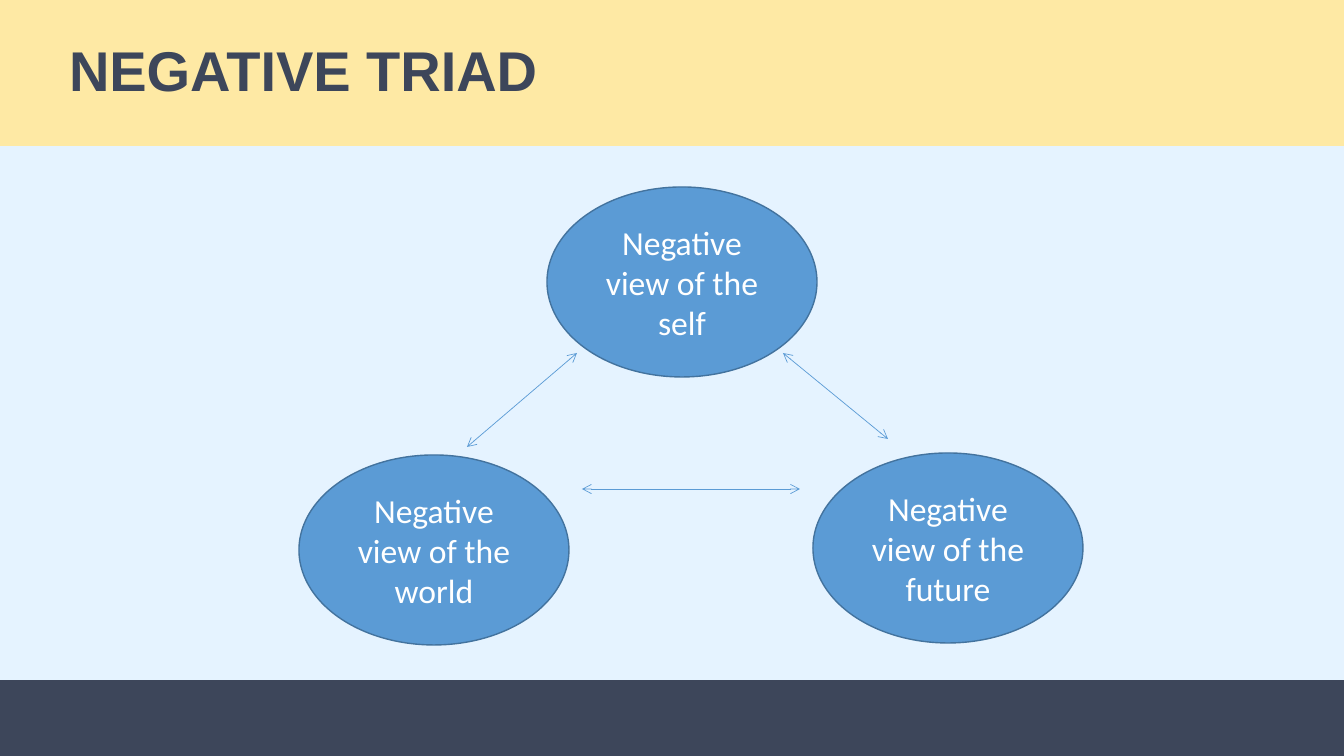
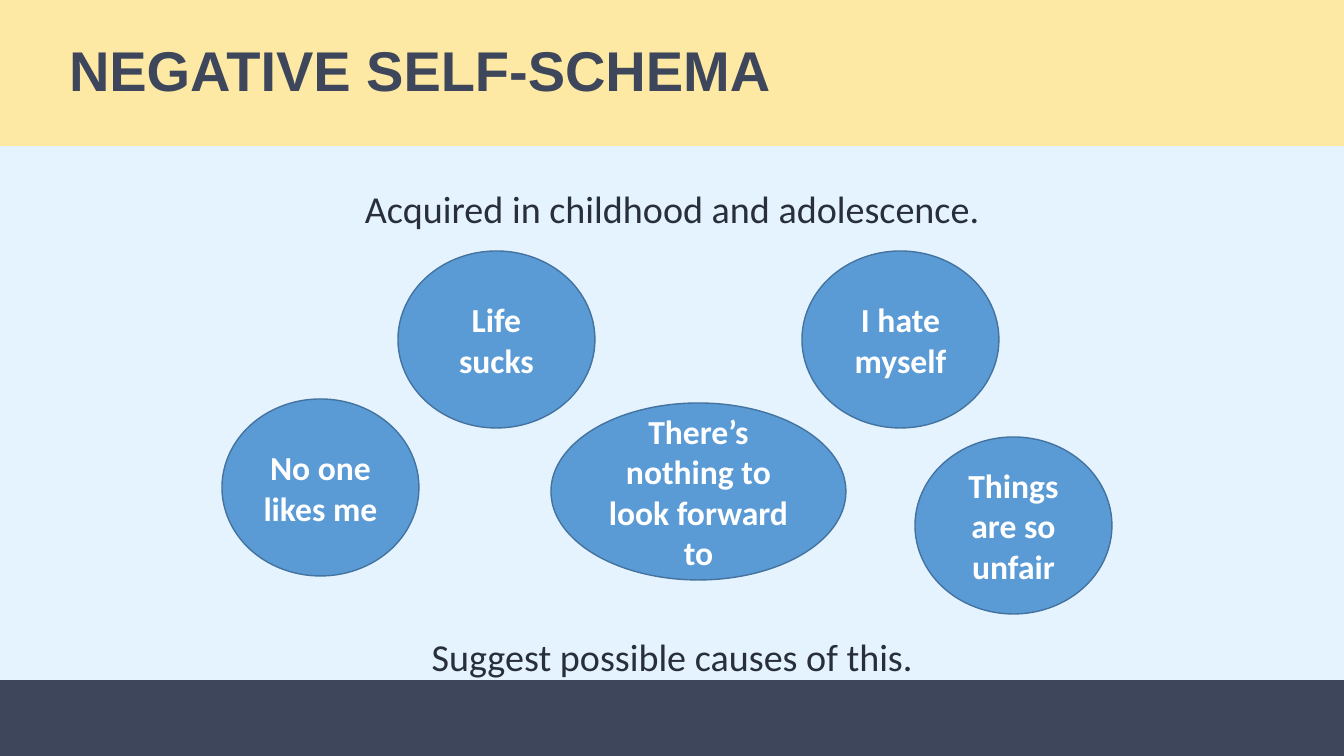
"""Build two slides on the negative triad and the negative self-schema."""
import pptx
import pptx.dml.color
import pptx.enum.shapes
import pptx.enum.text
import pptx.oxml.ns
import pptx.util
import lxml.etree

WIDTH, HEIGHT = 1344, 756
EMU_PER_PX = 12192000 / WIDTH
TITLE_HEIGHT = 146
FOOTER_TOP = 680
TITLE_ONLY = 5


def px(length):
    return pptx.util.Emu(round(length * EMU_PER_PX))


def colour(hex_string):
    return pptx.dml.color.RGBColor.from_string(hex_string)


def paint(fill, hex_string):
    fill.solid()
    fill.fore_color.rgb = colour(hex_string)


class Deck:
    background = "E5F3FF"
    band = "FEE9A4"
    dark = "3D465A"
    text_colour = "282E3C"
    blue = "5B9BD5"
    outline = "43739E"
    white = "FFFFFF"
    title_font = "Arial"
    body_font = "Calibri"

    def __init__(self):
        self.presentation = pptx.Presentation()
        self.presentation.slide_width = px(WIDTH)
        self.presentation.slide_height = px(HEIGHT)
        paint(self.presentation.slide_master.background.fill, self.background)
        self.slide = None

    def set_text(self, text_frame, text, size, font_name, hex_string,
                 bold=False, alignment=pptx.enum.text.PP_ALIGN.CENTER):
        text_frame.text = text
        text_frame.word_wrap = True
        text_frame.auto_size = pptx.enum.text.MSO_AUTO_SIZE.NONE
        text_frame.vertical_anchor = pptx.enum.text.MSO_ANCHOR.MIDDLE
        paragraph = text_frame.paragraphs[0]
        paragraph.alignment = alignment
        for run in paragraph.runs:
            run.font.size = pptx.util.Pt(size)
            run.font.name = font_name
            run.font.bold = bold
            run.font.color.rgb = colour(hex_string)

    def add_slide(self, title_text):
        layout = self.presentation.slide_layouts[TITLE_ONLY]
        self.slide = self.presentation.slides.add_slide(layout)
        title = self.slide.shapes.title
        title.left, title.top = px(0), px(0)
        title.width, title.height = px(WIDTH), px(TITLE_HEIGHT)
        paint(title.fill, self.band)
        self.set_text(title.text_frame, title_text, 40, self.title_font, self.dark,
                      bold=True, alignment=pptx.enum.text.PP_ALIGN.LEFT)
        title.text_frame.margin_left = px(69)
        title.text_frame.paragraphs[0].line_spacing = 0.9
        self.add_footer()

    def add_shape(self, kind, left, top, width, height, fill):
        shape = self.slide.shapes.add_shape(
            kind, px(left), px(top), px(width), px(height))
        shape.shadow.inherit = False
        paint(shape.fill, fill)
        return shape

    def add_footer(self):
        footer = self.add_shape(pptx.enum.shapes.MSO_SHAPE.RECTANGLE, 0, FOOTER_TOP,
                                WIDTH, HEIGHT - FOOTER_TOP, self.dark)
        footer.line.fill.background()

    def add_ellipse(self, text, left, top, width, height, bold=False):
        ellipse = self.add_shape(pptx.enum.shapes.MSO_SHAPE.OVAL,
                                 left, top, width, height, self.blue)
        ellipse.line.color.rgb = colour(self.outline)
        ellipse.line.width = pptx.util.Pt(1)
        self.set_text(ellipse.text_frame, text, 24, self.body_font, self.white, bold)

    def add_double_arrow(self, start_x, start_y, end_x, end_y):
        arrow = self.slide.shapes.add_connector(
            pptx.enum.shapes.MSO_CONNECTOR.STRAIGHT,
            px(start_x), px(start_y), px(end_x), px(end_y))
        arrow.line.color.rgb = colour(self.blue)
        arrow.line.width = pptx.util.Pt(0.5)
        qn = pptx.oxml.ns.qn
        properties = arrow._element.spPr
        line = properties.find(qn("a:ln"))
        for end in ("a:headEnd", "a:tailEnd"):
            lxml.etree.SubElement(line, qn(end), type="arrow")
        lxml.etree.SubElement(properties, qn("a:effectLst"))

    def add_statement(self, text, top):
        box = self.slide.shapes.add_textbox(px(219), px(top), px(907), px(50))
        self.set_text(box.text_frame, text, 27.2, self.body_font, self.text_colour)


def add_triad(deck):
    deck.add_slide("NEGATIVE TRIAD")
    for ends in ((577, 353, 467, 447), (783, 353, 888, 439), (582, 489, 800, 489)):
        deck.add_double_arrow(*ends)
    for subject, left, top in (("self", 547, 187), ("future", 813, 453),
                               ("world", 299, 455)):
        deck.add_ellipse(f"Negative view of the {subject}", left, top, 270, 190)


def add_self_schema(deck):
    deck.add_slide("NEGATIVE SELF-SCHEMA")
    deck.add_statement("Acquired in childhood and adolescence.", 183)
    thoughts = (
        ("No one likes me", 222, 399, 197),
        ("Life sucks", 398, 251, 197),
        ("There’s nothing to look forward to", 551, 403, 295),
        ("I hate myself", 802, 251, 197),
        ("Things are so unfair", 915, 437, 197),
    )
    for text, left, top, width in thoughts:
        deck.add_ellipse(text, left, top, width, 177, bold=True)
    deck.add_statement("Suggest possible causes of this.", 631)


def main():
    deck = Deck()
    add_triad(deck)
    add_self_schema(deck)
    deck.presentation.save("out.pptx")


if __name__ == "__main__":
    main()
